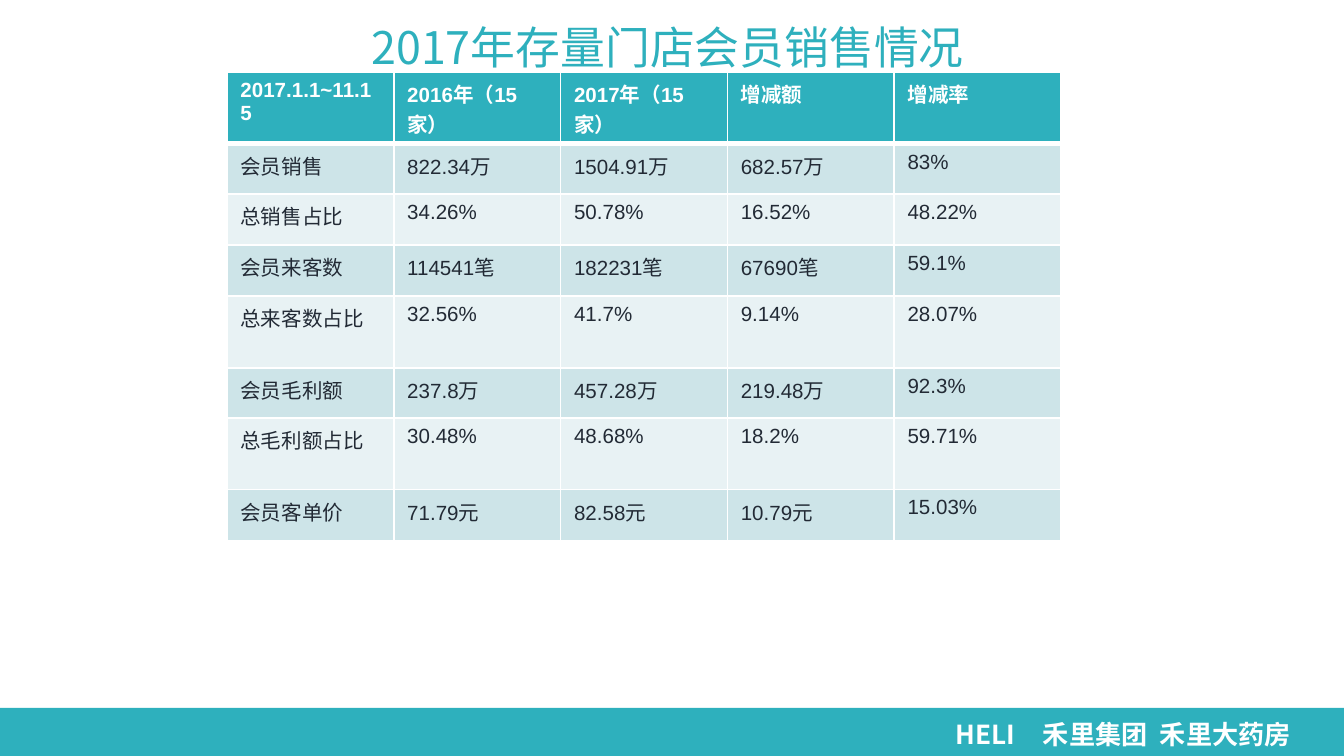
import dataclasses

import lxml.etree
import pptx
import pptx.dml.color
import pptx.enum.shapes
import pptx.enum.text
import pptx.oxml.ns
import pptx.util

SCALE = 914400 / 134.4
ALIGN = pptx.enum.text.PP_ALIGN
ANCHOR = pptx.enum.text.MSO_ANCHOR


@dataclasses.dataclass(frozen=True)
class Theme:
    teal: str = "2EB0BD"
    white: str = "FFFFFF"
    ink: str = "222A35"
    bands: tuple = ("CDE4E8", "E8F2F4")
    latin: str = "Arial"
    han: str = "Noto Sans CJK SC"
    title: int = 24
    brand: int = 14
    body: int = 11


THEME = Theme()

ROWS = [
    ("2017.1.1~11.15", "2016年（15家）", "2017年（15家）", "增减额", "增减率"),
    ("会员销售", "822.34万", "1504.91万", "682.57万", "83%"),
    ("总销售占比", "34.26%", "50.78%", "16.52%", "48.22%"),
    ("会员来客数", "114541笔", "182231笔", "67690笔", "59.1%"),
    ("总来客数占比", "32.56%", "41.7%", "9.14%", "28.07%"),
    ("会员毛利额", "237.8万", "457.28万", "219.48万", "92.3%"),
    ("总毛利额占比", "30.48%", "48.68%", "18.2%", "59.71%"),
    ("会员客单价", "71.79元", "82.58元", "10.79元", "15.03%"),
]
HEIGHTS = (72, 50, 51, 51, 72, 50, 72, 51)


def px(count):
    return pptx.util.Emu(round(count * SCALE))


def rgb(color):
    return pptx.dml.color.RGBColor.from_string(color)


def paint(item, color):
    item.fill.solid()
    item.fill.fore_color.rgb = rgb(color)


def node(parent, tag, **attrs):
    return lxml.etree.SubElement(parent, pptx.oxml.ns.qn(tag), attrs)


def write(frame, text, *, size, color, font=THEME.han, bold=False,
          align=ALIGN.LEFT, space=None, tabs=()):
    """Fill a text frame with one run; tabs are px from the text's left edge."""
    frame.word_wrap = True
    para = frame.paragraphs[0]
    para.alignment = align
    para.line_spacing = space
    if tabs:
        stops = node(para._p.get_or_add_pPr(), "a:tabLst")
        for stop in tabs:
            node(stops, "a:tab", pos=str(px(stop)), algn="l")
    run = para.add_run()
    run.text = text
    run.font.name = font
    run.font.size = pptx.util.Pt(size)
    run.font.bold = bold
    run.font.color.rgb = rgb(color)
    node(run._r.get_or_add_rPr(), "a:ea", typeface=THEME.han)


def edge(cell, top, low):
    """Draw white cell borders; top and low are widths in points."""
    props = cell._tc.get_or_add_tcPr()
    for side, width in (("L", 1), ("R", 1), ("T", top), ("B", low)):
        line = node(props, f"a:ln{side}", w=str(pptx.util.Pt(width)))
        node(node(line, "a:solidFill"), "a:srgbClr", val=THEME.white)


def add_title(slide, left, top, width, height):
    title = slide.shapes.title
    title.left, title.top = px(left), px(top)
    title.width, title.height = px(width), px(height)
    frame = title.text_frame
    frame.auto_size = pptx.enum.text.MSO_AUTO_SIZE.NONE
    frame.vertical_anchor = ANCHOR.MIDDLE
    frame.margin_left = frame.margin_right = 0
    write(frame, "2017年存量门店会员销售情况", size=THEME.title,
          color=THEME.teal, align=ALIGN.CENTER, space=0.9)


def add_grid(slide, left, top, width):
    count = len(ROWS[0])
    table = slide.shapes.add_table(len(ROWS), count, px(left), px(top),
                                   px(width), px(sum(HEIGHTS))).table
    for col in table.columns:
        col.width = px(width / count)
    for i, (row, height) in enumerate(zip(ROWS, HEIGHTS)):
        table.rows[i].height = px(height)
        head = i == 0
        for j, text in enumerate(row):
            cell = table.cell(i, j)
            edge(cell, 3 if i == 1 else 1, 3 if head else 1)
            paint(cell, THEME.teal if head else THEME.bands[(i - 1) % 2])
            write(cell.text_frame, text, size=THEME.body, font=THEME.latin,
                  color=THEME.white if head else THEME.ink, bold=head)


def add_foot(slide, left, top, width, height):
    bar = slide.shapes.add_shape(pptx.enum.shapes.MSO_SHAPE.RECTANGLE,
                                 px(left), px(top), px(width), px(height))
    bar.shadow.inherit = False
    bar.line.fill.background()
    paint(bar, THEME.teal)
    label = slide.shapes.add_textbox(px(left + 946), px(top + 5),
                                     px(width - 946), px(height - 6))
    frame = label.text_frame
    frame.margin_left = frame.margin_right = px(10)
    frame.margin_top = frame.margin_bottom = px(5)
    write(frame, "HELI\t禾里集团\t禾里大药房", size=THEME.brand,
          color=THEME.white, bold=True, tabs=(87, 204))


def main():
    deck = pptx.Presentation()
    deck.slide_width, deck.slide_height = px(1344), px(756)
    slide = deck.slides.add_slide(deck.slide_layouts[5])
    add_foot(slide, 0, 708, 1344, 48)
    add_title(slide, 227, 16, 881, 67)
    add_grid(slide, 227, 72, 834)
    deck.save("out.pptx")


if __name__ == "__main__":
    main()
